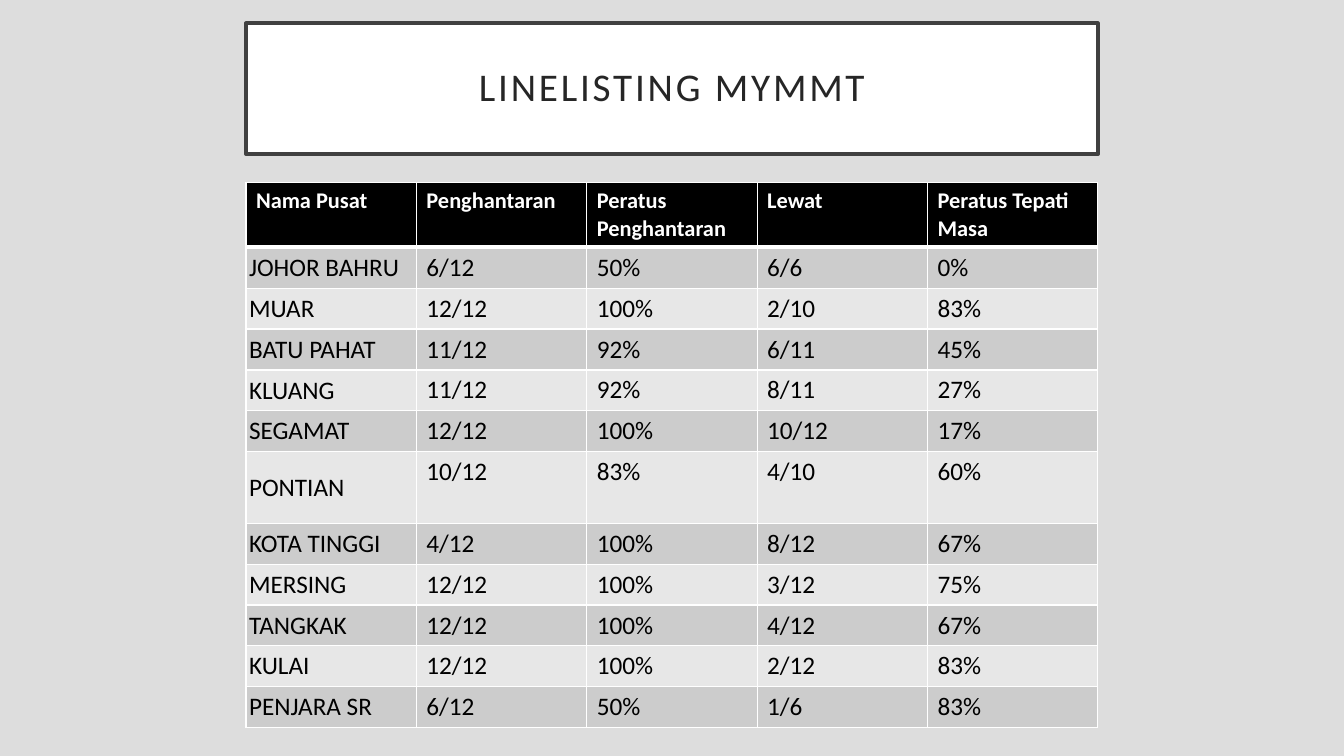
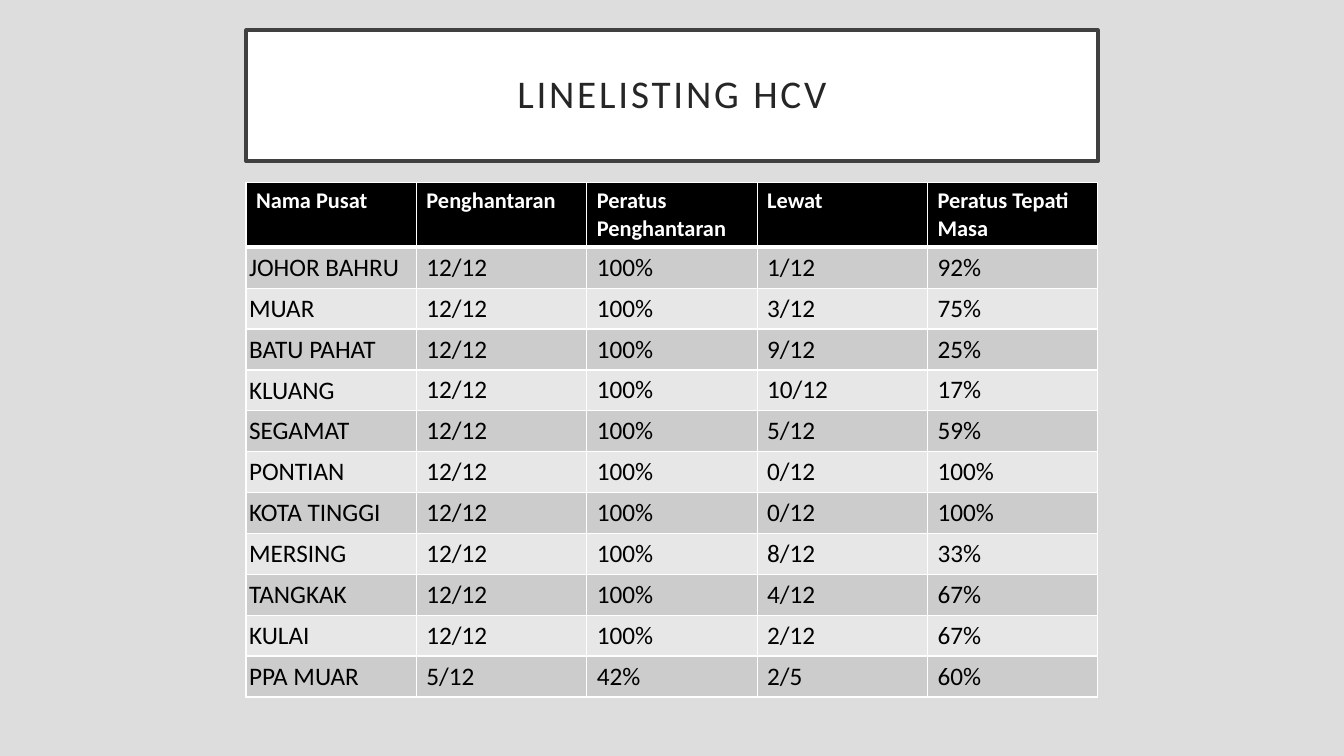
from lxml import etree
from pptx import Presentation
from pptx.dml.color import RGBColor
from pptx.enum.shapes import MSO_SHAPE
from pptx.enum.text import MSO_ANCHOR, PP_ALIGN
from pptx.oxml.ns import qn
from pptx.util import Inches, Pt

COLORS = {
    "background": "DDDDDD",
    "white": "FFFFFF",
    "title_line": "404040",
    "title_text": "262626",
    "header": "000000",
    "body_text": "000000",
    "odd_row": "CCCCCC",
    "even_row": "E7E7E7",
}
FONT = "Calibri"
LEFT, WIDTH = 2.44, 8.45
TITLE_HEIGHT = 1.3
TABLE_TOP = 1.81
HEADER_HEIGHT, ROW_HEIGHT = 0.64, 0.4

HEADERS = ["Nama Pusat", "Penghantaran", "Peratus Penghantaran", "Lewat", "Peratus Tepati Masa"]
CENTRES = ["JOHOR BAHRU", "MUAR", "BATU PAHAT", "KLUANG", "SEGAMAT", "PONTIAN",
           "KOTA TINGGI", "MERSING", "TANGKAK", "KULAI"]

LISTINGS = [
    {
        "title": "LINELISTING MYMMT",
        "title_top": 0.23,
        "centres": CENTRES + ["PENJARA SR"],
        "tall_rows": {"PONTIAN": 0.71},
        "values": [
            ("6/12", "50%", "6/6", "0%"),
            ("12/12", "100%", "2/10", "83%"),
            ("11/12", "92%", "6/11", "45%"),
            ("11/12", "92%", "8/11", "27%"),
            ("12/12", "100%", "10/12", "17%"),
            ("10/12", "83%", "4/10", "60%"),
            ("4/12", "100%", "8/12", "67%"),
            ("12/12", "100%", "3/12", "75%"),
            ("12/12", "100%", "4/12", "67%"),
            ("12/12", "100%", "2/12", "83%"),
            ("6/12", "50%", "1/6", "83%"),
        ],
    },
    {
        "title": "LINELISTING HCV",
        "title_top": 0.3,
        "centres": CENTRES + ["PPA MUAR"],
        "tall_rows": {},
        "values": [
            ("12/12", "100%", "1/12", "92%"),
            ("12/12", "100%", "3/12", "75%"),
            ("12/12", "100%", "9/12", "25%"),
            ("12/12", "100%", "10/12", "17%"),
            ("12/12", "100%", "5/12", "59%"),
            ("12/12", "100%", "0/12", "100%"),
            ("12/12", "100%", "0/12", "100%"),
            ("12/12", "100%", "8/12", "33%"),
            ("12/12", "100%", "4/12", "67%"),
            ("12/12", "100%", "2/12", "67%"),
            ("5/12", "42%", "2/5", "60%"),
        ],
    },
]


def color(name):
    return RGBColor.from_string(COLORS[name])


def set_fill(target, name):
    target.fill.solid()
    target.fill.fore_color.rgb = color(name)


def format_font(font, size, color_name, bold=False):
    font.name = FONT
    font.size = Pt(size)
    font.bold = bold
    font.color.rgb = color(color_name)


def add_title(slide, text, top):
    shape = slide.shapes.add_shape(MSO_SHAPE.RECTANGLE, Inches(LEFT), Inches(top),
                                   Inches(WIDTH), Inches(TITLE_HEIGHT))
    shape.shadow.inherit = False
    set_fill(shape, "white")
    shape.line.color.rgb = color("title_line")
    shape.line.width = Pt(2.5)

    text_frame = shape.text_frame
    text_frame.text = text
    text_frame.word_wrap = True
    text_frame.vertical_anchor = MSO_ANCHOR.MIDDLE
    text_frame.margin_left = text_frame.margin_right = Inches(0.2)
    text_frame.margin_top = text_frame.margin_bottom = Inches(0.2)
    paragraph = text_frame.paragraphs[0]
    paragraph.alignment = PP_ALIGN.CENTER
    paragraph.line_spacing = 0.9
    run = paragraph.runs[0]
    format_font(run.font, 28, "title_text")
    run.font._element.set("spc", "200")


def set_borders(cell, top=1, bottom=1):
    """Draw white cell borders; widths are in points."""
    properties = cell._tc.get_or_add_tcPr()
    for side, width in (("lnL", 1), ("lnR", 1), ("lnT", top), ("lnB", bottom)):
        line = etree.SubElement(properties, qn(f"a:{side}"), w=str(Pt(width)))
        solid_fill = etree.SubElement(line, qn("a:solidFill"))
        etree.SubElement(solid_fill, qn("a:srgbClr"), val=COLORS["white"])


def format_header_cell(cell):
    set_borders(cell, bottom=3)
    set_fill(cell, "header")
    format_font(cell.text_frame.paragraphs[0].runs[0].font, 16, "white", bold=True)


def format_body_cell(cell, row_index, column_index):
    set_borders(cell, top=3 if row_index == 1 else 1)
    set_fill(cell, "odd_row" if row_index % 2 else "even_row")
    format_font(cell.text_frame.paragraphs[0].runs[0].font, 18, "body_text")
    if column_index == 0:
        cell.vertical_anchor = MSO_ANCHOR.MIDDLE
        cell.margin_left = cell.margin_right = Inches(0.03)
        cell.margin_top = cell.margin_bottom = 0


def add_listing_table(slide, centres, values, tall_rows):
    rows = [HEADERS] + [[centre, *numbers] for centre, numbers in zip(centres, values)]
    heights = [HEADER_HEIGHT] + [tall_rows.get(centre, ROW_HEIGHT) for centre in centres]
    table = slide.shapes.add_table(len(rows), len(HEADERS), Inches(LEFT), Inches(TABLE_TOP),
                                   Inches(WIDTH), Inches(sum(heights))).table
    table.horz_banding = False
    for row_index, (texts, height) in enumerate(zip(rows, heights)):
        table.rows[row_index].height = Inches(height)
        for column_index, text in enumerate(texts):
            cell = table.cell(row_index, column_index)
            cell.text_frame.text = text
            if row_index == 0:
                format_header_cell(cell)
            else:
                format_body_cell(cell, row_index, column_index)


def add_listing_slide(presentation, listing):
    slide = presentation.slides.add_slide(presentation.slide_layouts[6])
    add_title(slide, listing["title"], listing["title_top"])
    add_listing_table(slide, listing["centres"], listing["values"], listing["tall_rows"])


def main():
    presentation = Presentation()
    presentation.slide_width = Inches(13.33)
    presentation.slide_height = Inches(7.5)
    set_fill(presentation.slide_master.background, "background")
    for listing in LISTINGS:
        add_listing_slide(presentation, listing)
    presentation.save("out.pptx")


if __name__ == "__main__":
    main()
